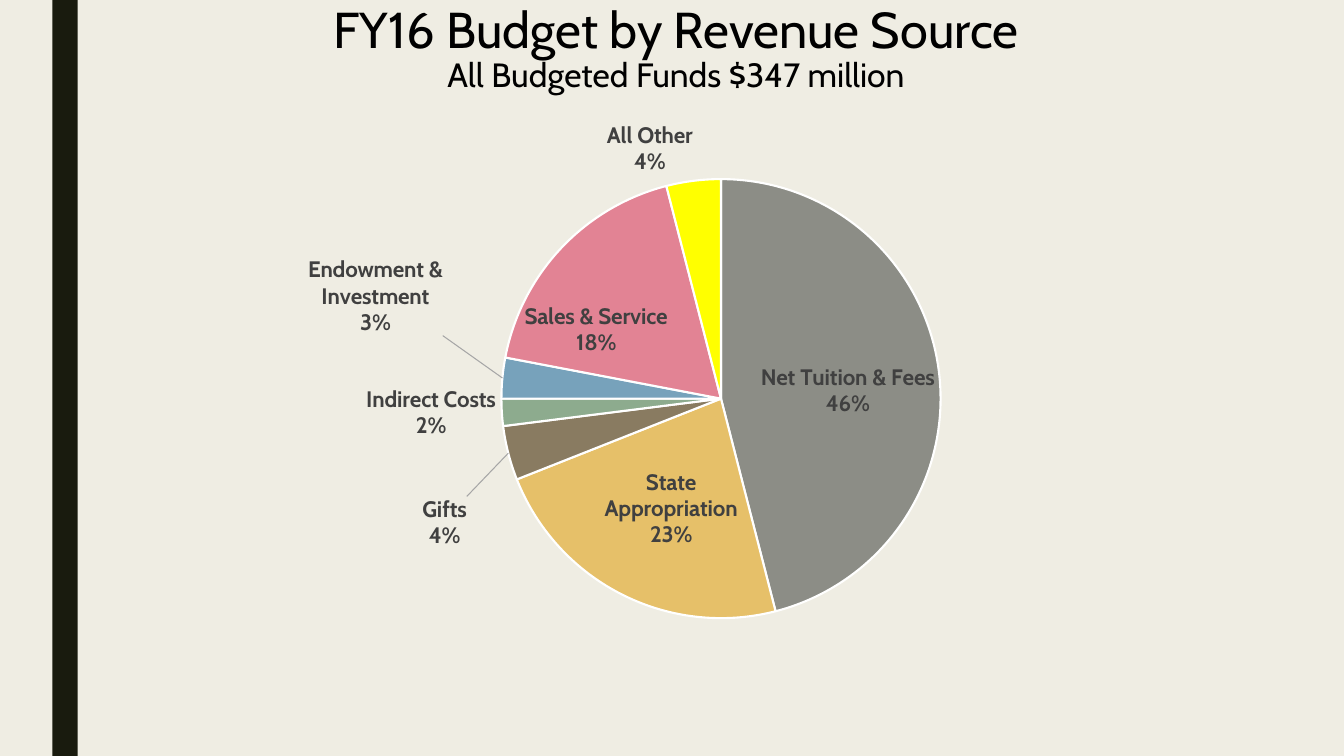
from copy import deepcopy

from pptx import Presentation
from pptx.chart.data import CategoryChartData
from pptx.dml.color import RGBColor
from pptx.enum.chart import XL_CHART_TYPE as ChartType
from pptx.enum.shapes import MSO_SHAPE as Shape
from pptx.enum.text import MSO_ANCHOR as Anchor, MSO_AUTO_SIZE as AutoSize, PP_ALIGN as Align
from pptx.oxml import parse_xml
from pptx.oxml.ns import nsdecls
from pptx.util import Inches, Pt

BACKGROUND = RGBColor(0xEF, 0xED, 0xE3)
BAR = RGBColor(0x19, 0x1B, 0x0E)
BLACK = RGBColor(0, 0, 0)
WHITE = RGBColor(0xFF, 0xFF, 0xFF)
LABEL = RGBColor(0x40, 0x40, 0x40)
LEADER = RGBColor(0xA6, 0xA6, 0xA6)
FONT = "Cabin"

# Category, percent, colour, label position, label shift as a share of the chart
REVENUE = [
    ("Net Tuition & Fees", 46, RGBColor(0x8C, 0x8D, 0x86), "ctr", (0.02, 0.01)),
    ("State Appropriation", 23, RGBColor(0xE6, 0xC0, 0x69), "ctr", (0, 0.02)),
    ("Gifts", 4, RGBColor(0x89, 0x7B, 0x61), "outEnd", (-0.04, 0.07)),
    ("Indirect Costs", 2, RGBColor(0x8D, 0xAB, 0x8E), "outEnd", (0, 0)),
    ("Endowment & Investment", 3, RGBColor(0x77, 0xA2, 0xBB), "outEnd", (-0.06, -0.07)),
    ("Sales & Service", 18, RGBColor(0xE2, 0x83, 0x94), "ctr", (-0.05, 0.01)),
    ("All Other", 4, RGBColor(0xFF, 0xFF, 0x00), "outEnd", (0, 0)),
]


def chart_xml(tag, content):
    return parse_xml(f"<c:{tag} {nsdecls('c', 'a')}>{content}</c:{tag}>")


def format_font(font, size, color=BLACK, bold=False):
    font.name, font.size, font.bold = FONT, Pt(size), bold
    font.color.rgb = color


def add_text(paragraph, text, **style):
    run = paragraph.add_run()
    run.text = text
    format_font(run.font, **style)


class SlideBuilder:
    def __init__(self, presentation):
        self.slide = presentation.slides.add_slide(presentation.slide_layouts[5])
        fill = self.slide.background.fill
        fill.solid()
        fill.fore_color.rgb = BACKGROUND

    def bar(self, left, top, width, height):
        shape = self.slide.shapes.add_shape(
            Shape.RECTANGLE, Inches(left), Inches(top), Inches(width), Inches(height))
        shape.shadow.inherit = False
        shape.fill.solid()
        shape.fill.fore_color.rgb = BAR
        shape.line.fill.background()

    def title(self, heading, subheading, left, top, width, height):
        title = self.slide.shapes.title
        title.left, title.top = Inches(left), Inches(top)
        title.width, title.height = Inches(width), Inches(height)
        frame = title.text_frame
        frame.word_wrap = True
        frame.auto_size = AutoSize.NONE
        frame.vertical_anchor = Anchor.TOP
        paragraph = frame.paragraphs[0]
        paragraph.alignment = Align.CENTER
        paragraph.line_spacing = 0.89
        add_text(paragraph, heading, size=36)
        paragraph.add_line_break()
        add_text(paragraph, subheading, size=24)

    def pie(self, left, top, width, height):
        data = CategoryChartData()
        data.categories = [row[0] for row in REVENUE]
        data.add_series("Series 1", [row[1] for row in REVENUE])
        chart = self.slide.shapes.add_chart(
            ChartType.PIE, Inches(left), Inches(top), Inches(width), Inches(height), data).chart
        chart.has_title = chart.has_legend = False
        format_font(chart.font, size=10)
        plot = chart.plots[0]
        plot.vary_by_categories = True
        series = plot.series[0]
        for index, (_, _, color, _, _) in enumerate(REVENUE):
            slice_format = series.points[index].format
            slice_format.fill.solid()
            slice_format.fill.fore_color.rgb = color
            slice_format.line.color.rgb = WHITE
            slice_format.line.width = Pt(1.5)
        self.place_plot(chart, x=0.33, y=0.12, w=0.49, h=0.74)
        self.label_slices(chart, series.data_labels)

    def place_plot(self, chart, **box):
        """Fix the inner plot area, given as shares of the chart."""
        area = chart.element.xpath("c:chart/c:plotArea")[0]
        for layout in area.xpath("c:layout"):
            area.remove(layout)
        sizes = "".join(f'<c:{name} val="{value}"/>' for name, value in box.items())
        area.insert(0, chart_xml("layout", (
            '<c:manualLayout><c:layoutTarget val="inner"/><c:xMode val="edge"/>'
            f'<c:yMode val="edge"/>{sizes}</c:manualLayout>')))

    def label_slices(self, chart, labels):
        """Show category and percent, with a shift and leader line where needed."""
        labels.show_value = False
        labels.show_category_name = labels.show_percentage = True
        labels.number_format, labels.number_format_is_linked = "0%", False
        format_font(labels.font, size=16, color=LABEL, bold=True)
        group = chart.element.xpath(".//c:ser/c:dLbls")[0]
        group.xpath("c:showBubbleSize")[0].addnext(chart_xml("separator", "\n"))
        group.xpath("c:showLeaderLines")[0].addnext(chart_xml("leaderLines", (
            f'<c:spPr><a:ln w="9525"><a:solidFill><a:srgbClr val="{LEADER}"/>'
            '</a:solidFill></a:ln></c:spPr>')))
        shared = group.xpath(
            "c:numFmt | c:txPr | c:showLegendKey | c:showVal | c:showCatName"
            " | c:showSerName | c:showPercent | c:showBubbleSize | c:separator")
        for index, (_, _, _, position, (x, y)) in enumerate(REVENUE):
            label = chart_xml("dLbl", (
                f'<c:idx val="{index}"/><c:layout><c:manualLayout><c:x val="{x}"/>'
                f'<c:y val="{y}"/></c:manualLayout></c:layout>'))
            for element in shared:
                label.append(deepcopy(element))
            label.xpath("c:txPr")[0].addnext(
                parse_xml(f'<c:dLblPos {nsdecls("c")} val="{position}"/>'))
            group.insert(index, label)


def main():
    presentation = Presentation()
    presentation.slide_width, presentation.slide_height = Inches(13.33), Inches(7.5)
    builder = SlideBuilder(presentation)
    builder.bar(0.52, 0, 0.25, 7.5)
    builder.title("FY16 Budget by Revenue Source", "All Budgeted Funds $347 million",
                  0.39, 0, 12.63, 1.25)
    builder.pie(2.04, 1.05, 8.89, 5.93)
    presentation.save("out.pptx")


if __name__ == "__main__":
    main()
